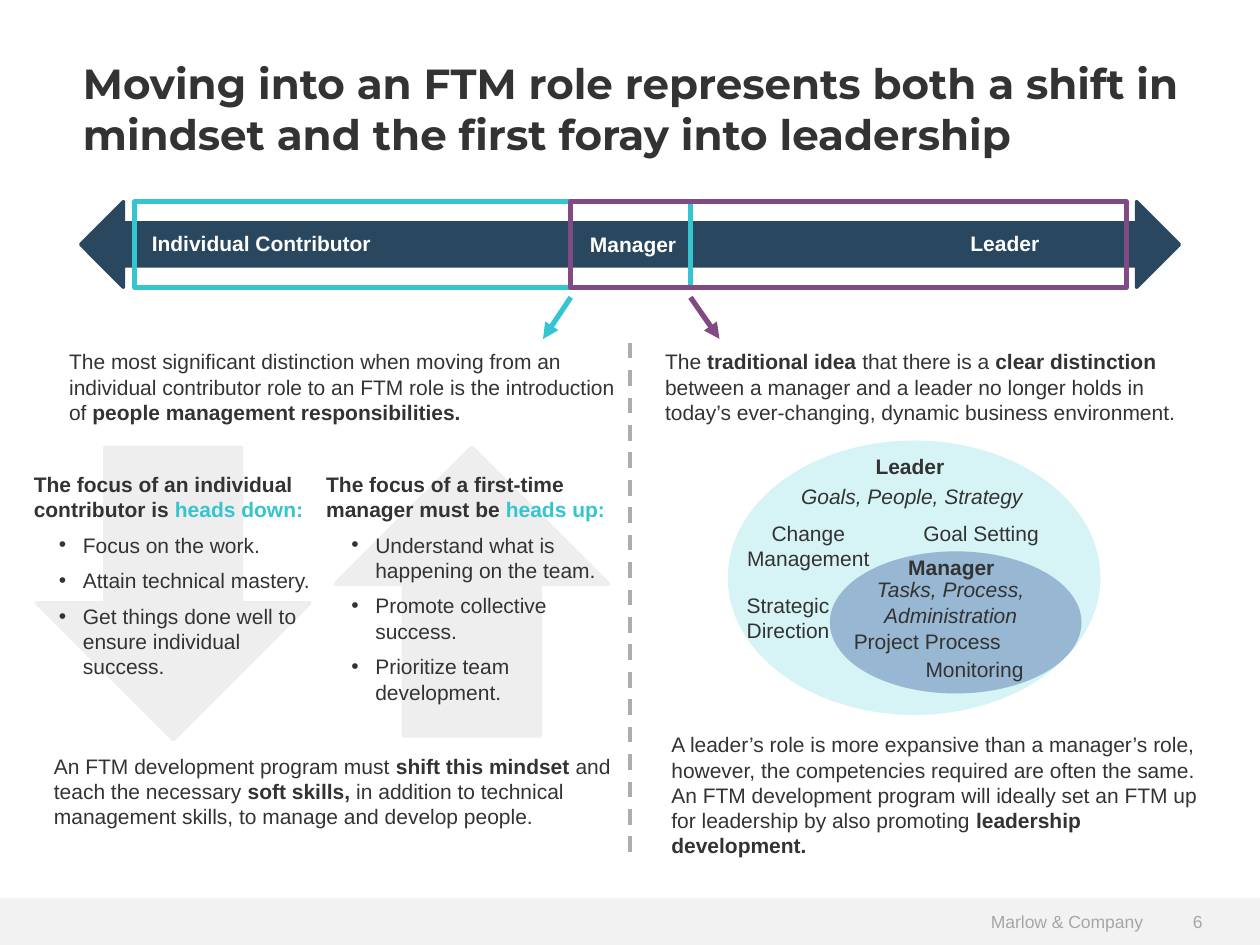
"""Build a slide on the shift from contributor to first-time manager."""
from dataclasses import dataclass

from lxml import etree
from pptx import Presentation
from pptx.dml.color import RGBColor
from pptx.enum.dml import MSO_LINE
from pptx.enum.shapes import MSO_CONNECTOR, MSO_SHAPE
from pptx.enum.text import MSO_ANCHOR, MSO_AUTO_SIZE, PP_ALIGN
from pptx.oxml.ns import qn
from pptx.util import Inches, Pt

LEFT, CENTER, RIGHT = PP_ALIGN.LEFT, PP_ALIGN.CENTER, PP_ALIGN.RIGHT
TOP, MIDDLE = MSO_ANCHOR.TOP, MSO_ANCHOR.MIDDLE
GROW, FIXED = MSO_AUTO_SIZE.SHAPE_TO_FIT_TEXT, MSO_AUTO_SIZE.NONE
RECT, OVAL = MSO_SHAPE.RECTANGLE, MSO_SHAPE.OVAL
DOWN, BOTH = MSO_SHAPE.DOWN_ARROW, MSO_SHAPE.LEFT_RIGHT_ARROW
DASH, STRAIGHT = MSO_LINE.DASH, MSO_CONNECTOR.STRAIGHT


@dataclass(frozen=True)
class Theme:
    """Hold colours, fonts and type sizes."""
    ink: str = "333333"
    white: str = "FFFFFF"
    navy: str = "29475F"
    teal: str = "34C5D0"
    plum: str = "824A85"
    pale: str = "D6F3F6"
    blue: str = "97B7D2"
    gray: str = "EEEEEE"
    rule: str = "ADADAD"
    band: str = "F2F2F2"
    muted: str = "A6A6A6"
    head: str = "Montserrat"
    body: str = "Arial"
    title: int = 24
    text: int = 12
    small: int = 10


T = Theme()

TITLE = "Moving into an FTM role represents both a shift in mindset and the first foray into leadership"
FOOTER = [
    ((0, 7.13, 9.17, 0.37), "Marlow & Company", RIGHT, 0),
    ((9.17, 7.13, 0.83, 0.37), "6", LEFT, 0.2),
]
STAGES = [("Individual Contributor", 1.78), ("Manager", 1.79), ("Leader", 1.78)]
FRAMES = [(1.07, T.teal), (4.53, T.plum)]
POINTERS = [(4.53, 4.31, T.teal), (5.48, 5.71, T.plum)]
PROSE = [
    ((0.45, 2.72, 4.55, 0.71), [
        ("The most significant distinction when moving from an individual contributor role "
         "to an FTM role is the introduction of ", ""),
        ("people management responsibilities.", "b")]),
    ((0.33, 5.93, 4.67, 0.71), [
        ("An FTM development program must ", ""), ("shift this mindset ", "b"),
        ("and teach the necessary ", ""), ("soft skills, ", "b"),
        ("in addition to technical management skills, to manage and develop people.", "")]),
    ((5.18, 2.72, 4.55, 0.71), [
        ("The ", ""), ("traditional idea ", "b"), ("that there is a ", ""),
        ("clear distinction", "b"),
        (" between a manager and a leader no longer holds in today’s ever-changing, "
         "dynamic business environment.", "")]),
    ((5.23, 5.76, 4.55, 1.11), [
        ("A leader’s role is more expansive than a manager’s role, however, the competencies "
         "required are often the same. An FTM development program will ideally set an FTM up "
         "for leadership by also promoting ", ""),
        ("leadership development.", "b")]),
]
FOCUS = [
    ((0.29, 3.55, 2.17, 2.32), 0, (0.17, 3.69, 2.4, 1.77),
     [("The focus of an individual contributor is ", "b"), ("heads down:", "ba")],
     ["Focus on the work.", "Attain technical mastery.",
      "Get things done well to ensure individual success."]),
    ((2.66, 3.55, 2.17, 2.29), 180, (2.49, 3.69, 2.51, 2.17),
     [("The focus of a first-time manager must be ", "b"), ("heads up:", "ba")],
     ["Understand what is happening on the team.", "Promote collective success.",
      "Prioritize team development."]),
]
OVALS = [((5.79, 3.51, 2.93, 2.15), T.pale), ((6.6, 4.39, 1.97, 1.1), T.blue)]
LABELS = [
    ((6.85, 3.55, 0.82, 0.3), "Leader", "b", LEFT),
    ((7.11, 4.35, 0.92, 0.3), "Manager", "b", LEFT),
    ((6.26, 3.79, 2.04, 0.3), "Goals, People, Strategy", "i", LEFT),
    ((6.82, 4.53, 1.45, 0.5), "Tasks, Process, Administration", "i", CENTER),
    ((7.23, 4.08, 1.16, 0.3), "Goal Setting", "", LEFT),
    ((5.77, 4.08, 1.29, 0.5), "Change Management", "", CENTER),
    ((5.62, 4.65, 1.27, 0.5), "Strategic Direction", "", CENTER),
    ((6.66, 4.94, 1.4, 0.3), "Project Process", "", CENTER),
    ((7.05, 5.16, 1.37, 0.3), "Monitoring", "", CENTER),
]


def paint(color):
    return RGBColor.from_string(color)


def place(box):
    return [Inches(n) for n in box]


def draw(slide, kind, box, fill=None, line=None, width=2, turn=0):
    shape = slide.shapes.add_shape(kind, *place(box))
    shape.shadow.inherit = False
    shape.rotation = turn
    if fill:
        shape.fill.solid()
        shape.fill.fore_color.rgb = paint(fill)
    else:
        shape.fill.background()
    if line:
        shape.line.color.rgb = paint(line)
        shape.line.width = Pt(width)
    else:
        shape.line.fill.background()
    return shape


def link(slide, start, end, color, width, dash=None, arrow=False):
    line = slide.shapes.add_connector(STRAIGHT, *place(start + end))
    line.line.color.rgb = paint(color)
    line.line.width = Pt(width)
    if dash:
        line.line.dash_style = dash
    if arrow:
        etree.SubElement(line.line._get_or_add_ln(), qn("a:tailEnd"), type="triangle")
    etree.SubElement(line._element.spPr, qn("a:effectLst"))


def indent(para, left, hang=0, bullet=None):
    props = para._p.get_or_add_pPr()
    props.set("marL", str(Inches(left)))
    props.set("indent", str(Inches(hang)))
    if bullet:
        etree.SubElement(props, qn("a:buFont"), typeface=T.body)
        etree.SubElement(props, qn("a:buChar"), char=bullet)


def write(shape, text, style="", size=T.text, color=T.ink, font=T.body,
          align=LEFT, anchor=TOP, fit=GROW, left=0, items=()):
    frame = shape.text_frame
    frame.word_wrap = True
    frame.auto_size = fit
    frame.vertical_anchor = anchor
    lead = [(text, style)] if isinstance(text, str) else text
    for i, runs in enumerate([lead] + [[(item, "")] for item in items]):
        para = frame.add_paragraph() if i else frame.paragraphs[0]
        para.alignment = align
        if i:
            para.space_before = Pt(6)
            indent(para, 0.39, -0.19, "•")
        elif left:
            indent(para, left)
        for words, mark in runs:
            run = para.add_run()
            run.text = words
            face = run.font
            face.name, face.size = font, Pt(size)
            face.bold, face.italic = "b" in mark, "i" in mark
            face.color.rgb = paint(T.teal if "a" in mark else color)


def note(slide, box, text, **form):
    write(slide.shapes.add_textbox(*place(box)), text, **form)


def main():
    deck = Presentation()
    deck.slide_width, deck.slide_height = Inches(10), Inches(7.5)
    slide = deck.slides.add_slide(deck.slide_layouts[6])

    for box, text, align, left in FOOTER:
        write(draw(slide, RECT, box, T.band), text, size=T.small, color=T.muted,
              align=align, anchor=MIDDLE, fit=FIXED, left=left)
    note(slide, (0.56, 0.41, 8.89, 0.94), TITLE, style="b", size=T.title,
         font=T.head, fit=FIXED)
    link(slide, (5, 2.72), (5, 6.77), T.rule, 2.25, dash=DASH)

    draw(slide, BOTH, (0.64, 1.6, 8.72, 0.68), T.navy, T.navy)
    for i, (text, top) in enumerate(STAGES):
        note(slide, (1.07 + i * 2.95, top, 2.01, 0.3), text, style="b",
             color=T.white, align=CENTER)
    for left, color in FRAMES:
        draw(slide, RECT, (left, 1.6, 4.41, 0.68), line=color, width=3)
    for start, end, color in POINTERS:
        link(slide, (start, 2.36), (end, 2.69), color, 3, arrow=True)

    for arrow, turn, box, lead, items in FOCUS:
        draw(slide, DOWN, arrow, T.gray, T.gray, turn=turn)
        note(slide, box, lead, items=items)
    for box, runs in PROSE:
        note(slide, box, runs)
    for box, color in OVALS:
        draw(slide, OVAL, box, color, color)
    for box, text, style, align in LABELS:
        note(slide, box, text, style=style, align=align)
    deck.save("out.pptx")


if __name__ == "__main__":
    main()
